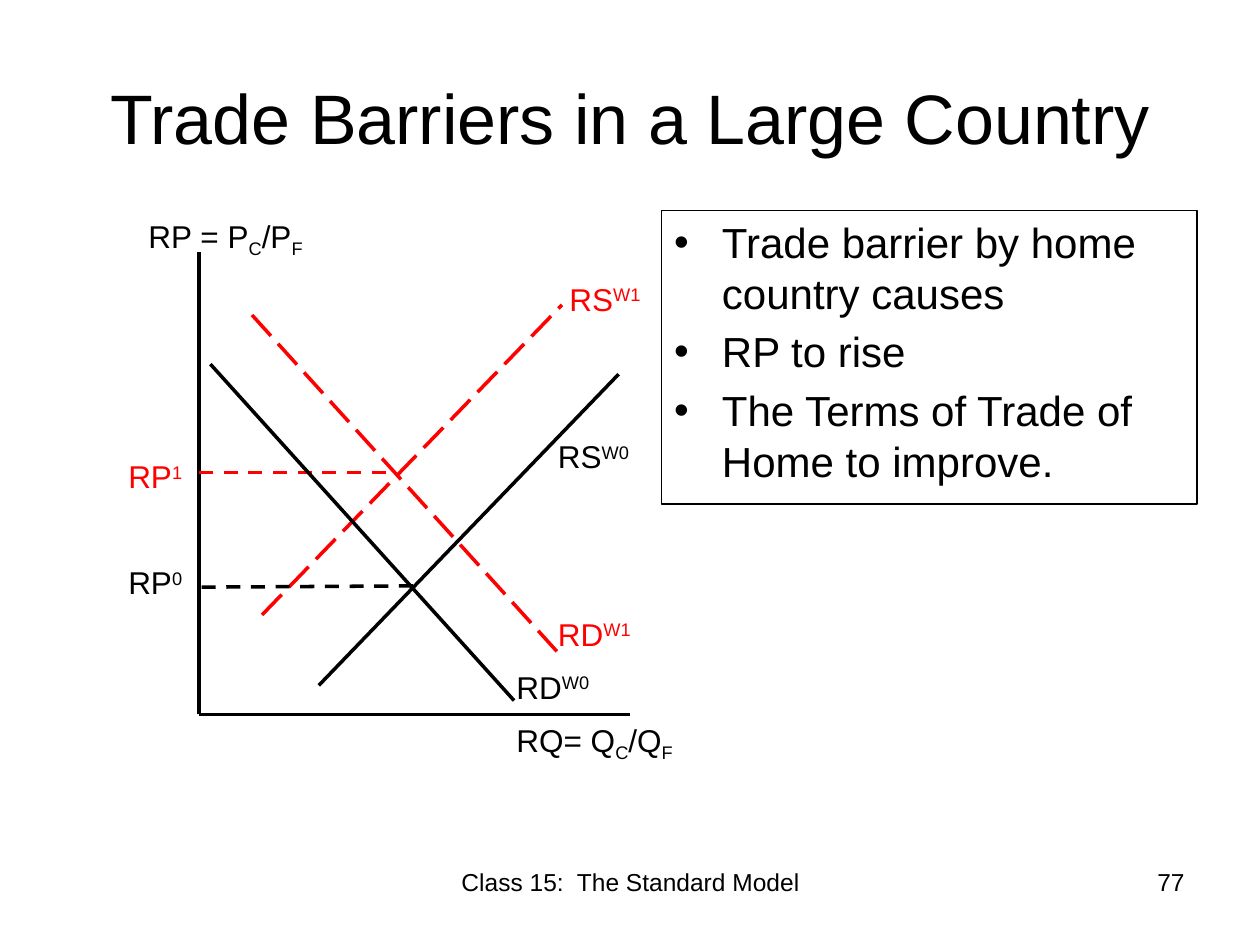
from lxml import etree
from pptx import Presentation
from pptx.dml.color import RGBColor
from pptx.enum import dml, shapes, text
from pptx.oxml.ns import qn
from pptx.util import Inches, Pt

BLACK = RGBColor(0, 0, 0)
RED = RGBColor(255, 0, 0)
FONT = "Arial"
SUB, SUP = -25, 30  # baseline shift in percent
DASH, LONG_DASH = dml.MSO_LINE.DASH, dml.MSO_LINE.LONG_DASH
LEFT, CENTER, RIGHT = text.PP_ALIGN.LEFT, text.PP_ALIGN.CENTER, text.PP_ALIGN.RIGHT

TITLE = "Trade Barriers in a Large Country"
POINTS = [
    "Trade barrier by home country causes",
    "RP to rise",
    "The Terms of Trade of Home to improve.",
]

# start, end, colour, dash
LINES = [
    ((1.58, 5.67), (5, 5.67), BLACK, None),  # quantity axis
    ((1.58, 5.67), (1.58, 2), BLACK, None),  # price axis
    ((2.08, 4.88), (4.46, 2.42), RED, LONG_DASH),  # new supply
    ((2, 2.5), (4.42, 5.17), RED, LONG_DASH),  # new demand
    ((1.58, 3.75), (3.08, 3.75), RED, DASH),  # new price
    ((2.53, 5.44), (4.91, 2.97), BLACK, None),  # old supply
    ((1.67, 2.89), (4.08, 5.56), BLACK, None),  # old demand
    ((1.6, 4.66), (3.28, 4.65), BLACK, DASH),  # old price
]

# left, top, width, colour, (text, baseline) pieces
LABELS = [
    (1.08, 1.67, 1.51, BLACK, [("RP = P", 0), ("C", SUB), ("/P", 0), ("F", SUB)]),
    (4, 5.67, 1.5, BLACK, [("RQ= Q", 0), ("C", SUB), ("/Q", 0), ("F", SUB)]),
    (4.33, 3.42, 0.82, BLACK, [("RS", 0), ("W0", SUP)]),
    (4, 5.25, 0.82, BLACK, [("RD", 0), ("W0", SUP)]),
    (4.42, 2.17, 0.82, RED, [("RS", 0), ("W1", SUP)]),
    (4.33, 4.83, 0.82, RED, [("RD", 0), ("W1", SUP)]),
    (0.92, 4.42, 0.67, BLACK, [("RP", 0), ("0", SUP)]),
    (0.92, 3.58, 0.67, RED, [("RP", 0), ("1", SUP)]),
]

# left, width, alignment, text
FOOTERS = [
    (3.42, 3.17, CENTER, "Class 15:  The Standard Model"),
    (7.17, 2.33, RIGHT, "77"),
]


def place(sp, left, top, width, height):
    sp.left, sp.top = Inches(left), Inches(top)
    sp.width, sp.height = Inches(width), Inches(height)


def style(font, size, color=BLACK):
    font.name, font.size = FONT, Pt(size)
    font.color.rgb = color


def add_text(s, box, pieces, size, color=BLACK, align=LEFT):
    tf = s.shapes.add_textbox(*map(Inches, box)).text_frame
    tf.word_wrap = True
    p = tf.paragraphs[0]
    p.alignment = align
    for words, shift in pieces:
        r = p.add_run()
        r.text = words
        style(r.font, size, color)
        if shift:
            r.font._element.set("baseline", str(shift * 1000))


def add_line(s, start, end, color, dash):
    line = s.shapes.add_connector(
        shapes.MSO_CONNECTOR.STRAIGHT, *map(Inches, start + end))
    line.line.color.rgb = color
    line.line.width = Pt(2)
    if dash:
        line.line.dash_style = dash
    etree.SubElement(line._element.spPr, qn("a:effectLst"))


def fill_title(sp):
    place(sp, 0.5, 0.3, 9, 1.25)
    tf = sp.text_frame
    tf.text = TITLE
    tf.auto_size = text.MSO_AUTO_SIZE.NONE
    tf.vertical_anchor = text.MSO_ANCHOR.MIDDLE
    p = tf.paragraphs[0]
    p.alignment = CENTER
    style(p.runs[0].font, 40)


def fill_points(sp):
    place(sp, 5.25, 1.67, 4.25, 2.33)
    sp.line.color.rgb = BLACK
    sp.line.width = Pt(0.75)
    tf = sp.text_frame
    tf.text = "\n".join(POINTS)
    tf.auto_size = text.MSO_AUTO_SIZE.NONE
    tf.vertical_anchor = text.MSO_ANCHOR.TOP
    for p in tf.paragraphs:
        pPr = p._p.get_or_add_pPr()
        pPr.set("marL", str(Inches(0.38)))
        pPr.set("indent", str(-Inches(0.38)))
        p.space_before = Pt(24 * 0.2)
        etree.SubElement(pPr, qn("a:buChar")).set("char", "•")
        style(p.runs[0].font, 24)


def main():
    prs = Presentation()
    prs.slide_width, prs.slide_height = Inches(10), Inches(7.5)
    s = prs.slides.add_slide(prs.slide_layouts[1])
    fill_title(s.shapes.title)
    fill_points(s.placeholders[1])
    for line in LINES:
        add_line(s, *line)
    for left, top, width, color, pieces in LABELS:
        add_text(s, (left, top, width, 0.4), pieces, 18, color)
    for left, width, align, words in FOOTERS:
        add_text(s, (left, 6.83, width, 0.52), [(words, 0)], 14, align=align)
    prs.save("out.pptx")


if __name__ == "__main__":
    main()
